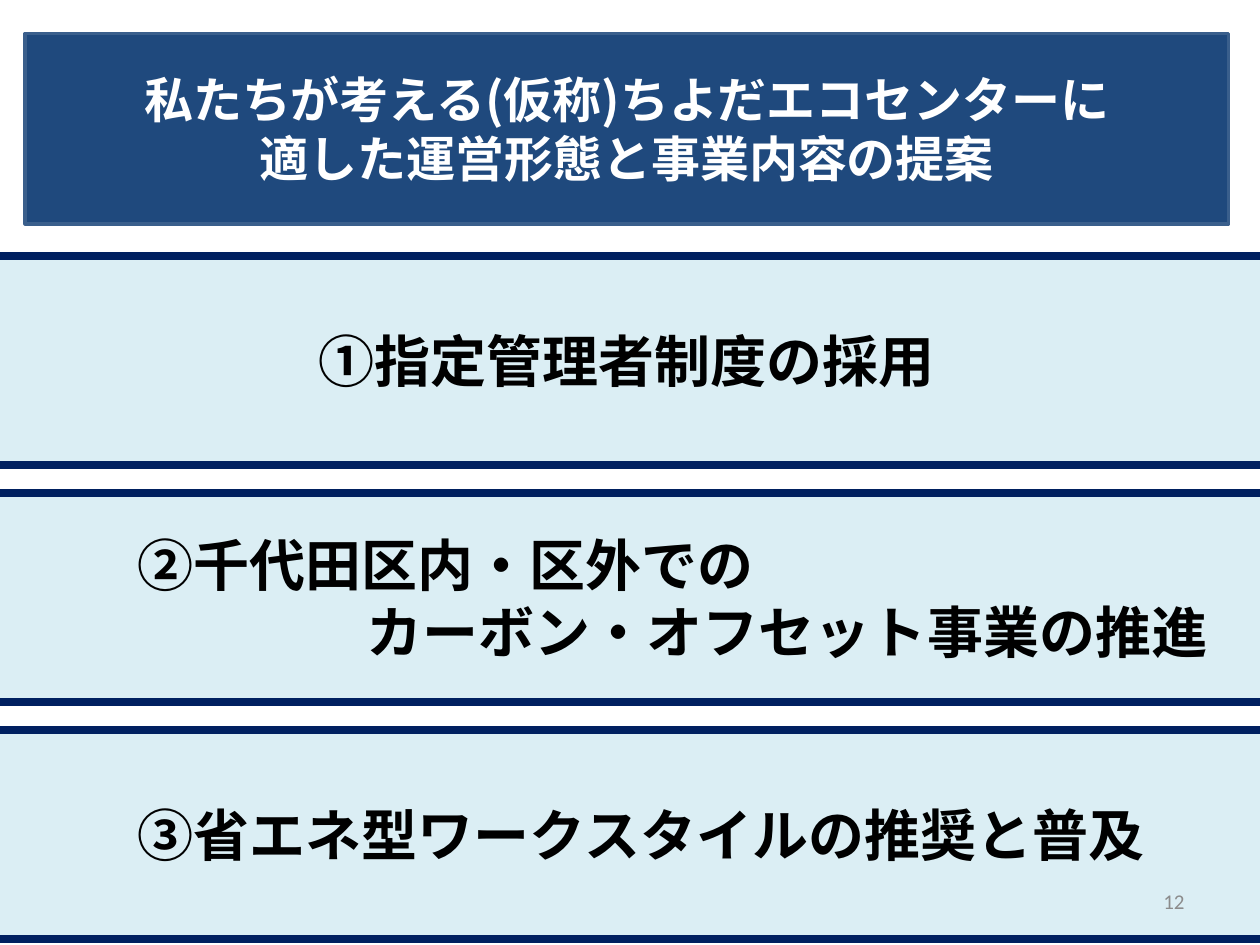
import pptx
import pptx.util
import pptx.dml.color
import pptx.enum.shapes
import pptx.enum.text
import pptx.oxml
import pptx.oxml.ns
from lxml import etree

Pt = pptx.util.Pt
ALIGN = pptx.enum.text.PP_ALIGN
SHAPE = pptx.enum.shapes.MSO_SHAPE

COLORS = {
    "title_fill": "1F497D",
    "title_line": "3A5F8C",
    "band_fill": "DBEEF4",
    "band_line": "002060",
    "white": "FFFFFF",
    "black": "000000",
    "gray": "8C8C8C",
}
JAPANESE = "Noto Sans CJK JP"


def rgb(name):
    return pptx.dml.color.RGBColor.from_string(COLORS[name])


def write(shape, lines, color, font_format):
    """Fill a shape with (text, alignment, left indent) lines, centred vertically."""
    frame = shape.text_frame
    frame.word_wrap = True
    frame.auto_size = pptx.enum.text.MSO_AUTO_SIZE.NONE
    frame.vertical_anchor = pptx.enum.text.MSO_ANCHOR.MIDDLE
    for index, (text, alignment, indent) in enumerate(lines):
        paragraph = frame.paragraphs[0] if index == 0 else frame.add_paragraph()
        paragraph.alignment = alignment
        if indent:
            paragraph._p.get_or_add_pPr().set("marL", str(Pt(indent)))
        run = paragraph.add_run()
        run.text = text
        for attribute, value in font_format.items():
            setattr(run.font, attribute, value)
        run.font.color.rgb = rgb(color)
        east_asian = etree.SubElement(run._r.get_or_add_rPr(), pptx.oxml.ns.qn("a:ea"))
        east_asian.set("typeface", font_format["name"])


presentation = pptx.Presentation()
presentation.slide_width = Pt(720)
presentation.slide_height = Pt(540)
slide = presentation.slides.add_slide(presentation.slide_layouts[5])

# Title in a rounded panel
title = slide.shapes.title
title_box = {"left": 14.4, "top": 19.2, "width": 687.6, "height": 108.8}
for attribute, value in title_box.items():
    setattr(title, attribute, Pt(value))
rounded = pptx.oxml.parse_xml(
    f'<a:prstGeom {pptx.oxml.ns.nsdecls("a")} prst="roundRect"><a:avLst/></a:prstGeom>'
)
title._element.spPr.append(rounded)
title.fill.solid()
title.fill.fore_color.rgb = rgb("title_fill")
title.line.color.rgb = rgb("title_line")
title.line.width = Pt(2)
title_lines = [
    ("私たちが考える(仮称)ちよだエコセンターに", ALIGN.CENTER, 0),
    ("適した運営形態と事業内容の提案", ALIGN.CENTER, 0),
]
write(title, title_lines, "white", {"size": Pt(28), "bold": True, "name": JAPANESE})

# Three proposal bands, evenly spaced, running past the slide edges
BAND_TOP, BAND_STEP, BAND_HEIGHT = 146.2, 135.4, 119.5
bands = [
    (-15.1, 746.6, [("①指定管理者制度の採用", ALIGN.CENTER, 0)]),
    (-24.5, 756.7, [
        ("②千代田区内・区外での", ALIGN.LEFT, 96),
        ("カーボン・オフセット事業の推進", ALIGN.LEFT, 227),
    ]),
    (-24.5, 746.6, [("③省エネ型ワークスタイルの推奨と普及", ALIGN.LEFT, 96)]),
]
for index, (left, width, lines) in enumerate(bands):
    band = slide.shapes.add_shape(
        SHAPE.RECTANGLE, Pt(left), Pt(BAND_TOP + index * BAND_STEP), Pt(width), Pt(BAND_HEIGHT)
    )
    band.shadow.inherit = False
    band.fill.solid()
    band.fill.fore_color.rgb = rgb("band_fill")
    band.line.color.rgb = rgb("band_line")
    band.line.width = Pt(4.5)
    write(band, lines, "black", {"size": Pt(32), "bold": True, "name": JAPANESE})

# Page number
page_number = slide.shapes.add_textbox(Pt(516), Pt(500.5), Pt(168), Pt(28.8))
write(page_number, [("12", ALIGN.RIGHT, 0)], "gray", {"size": Pt(12), "name": "Calibri"})

presentation.save("out.pptx")
